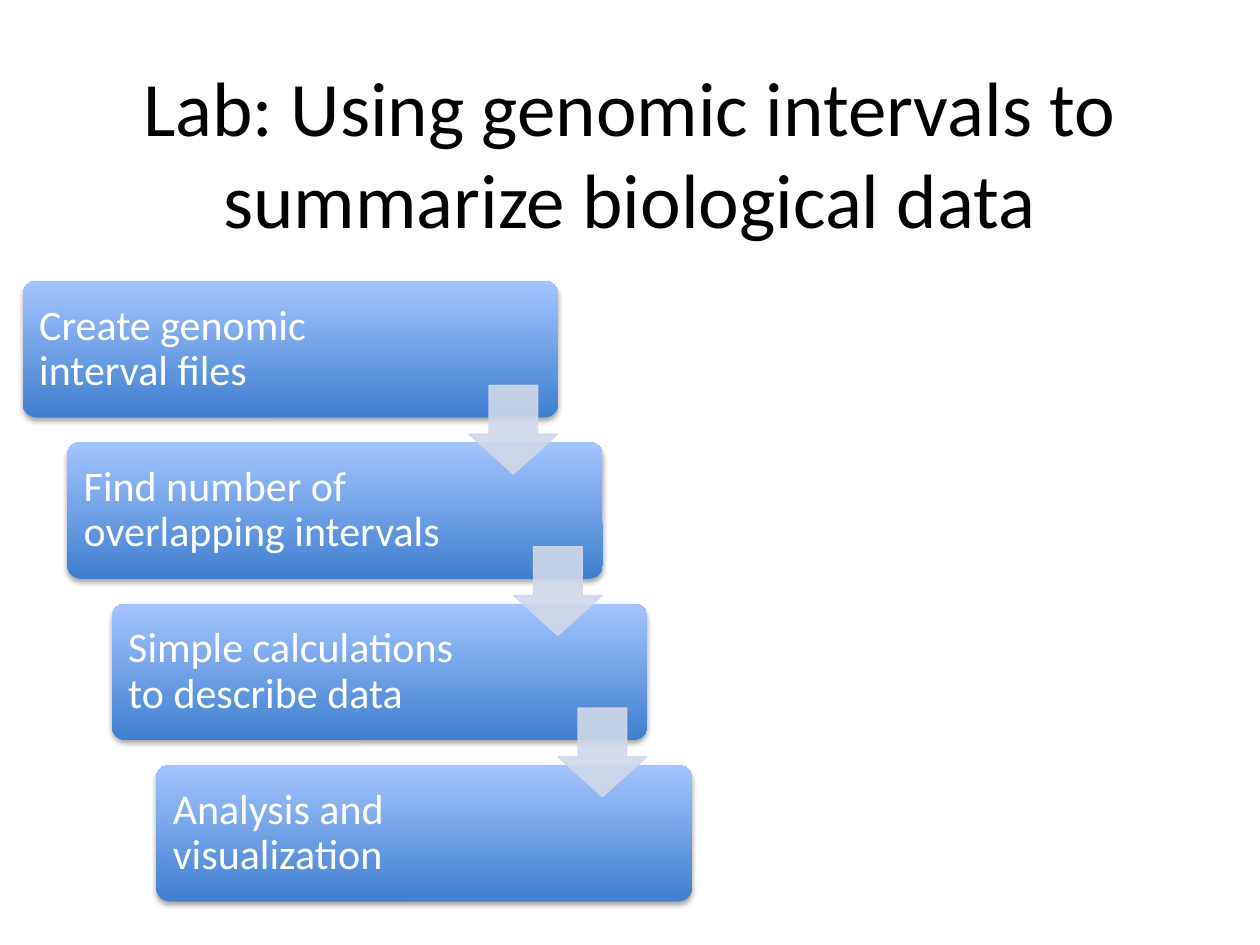
from lxml import etree
from pptx import Presentation
from pptx.dml.color import RGBColor
from pptx.enum.shapes import MSO_SHAPE
from pptx.enum.text import MSO_ANCHOR, PP_ALIGN
from pptx.oxml import parse_xml
from pptx.oxml.ns import qn
from pptx.util import Pt

ROUNDED, DOWN_ARROW = MSO_SHAPE.ROUNDED_RECTANGLE, MSO_SHAPE.DOWN_ARROW
MIDDLE = MSO_ANCHOR.MIDDLE
LEFT, CENTER = PP_ALIGN.LEFT, PP_ALIGN.CENTER
COLORS = {"title": "000000", "step_text": "FFFFFF", "step_bottom": "3F7FCE",
          "step_top": "A4C4FF", "arrow": "D0D8E8", "shadow": "000000"}
FONT = "Calibri"
STEPS = ["Create genomic interval files", "Find number of overlapping intervals",
         "Simple calculations to describe data", "Analysis and visualization"]

# Staircase geometry, in points
STEP_LEFT, STEP_TOP, STEP_W, STEP_H = 13, 160.6, 306, 78
SHIFT_X, SHIFT_Y = 25.45, 92.2
LABEL_INSET, LABEL_W = 2.3, 224.6
ARROW_LEFT, ARROW_TOP, ARROW_SIZE = 268, 220.2, 50.7

SHADOW = (
    '<a:effectLst xmlns:a="http://schemas.openxmlformats.org/drawingml/2006/main">'
    f'<a:outerShdw blurRad="{Pt(3.1)}" dist="{Pt(1.8)}" dir="5400000" rotWithShape="0">'
    f'<a:srgbClr val="{COLORS["shadow"]}"><a:alpha val="35000"/></a:srgbClr>'
    '</a:outerShdw></a:effectLst>')

prs = Presentation()
prs.slide_width, prs.slide_height = Pt(720), Pt(540)
slide = prs.slides.add_slide(prs.slide_layouts[6])


def add_text(left, top, width, height, text, size, color, align, spacing=1.0):
    box = slide.shapes.add_textbox(Pt(left), Pt(top), Pt(width), Pt(height))
    frame = box.text_frame
    frame.word_wrap = True
    frame.vertical_anchor = MIDDLE
    paragraph = frame.paragraphs[0]
    paragraph.alignment = align
    paragraph.line_spacing = spacing
    run = paragraph.add_run()
    run.text = text
    run.font.name = FONT
    run.font.size = Pt(size)
    run.font.color.rgb = RGBColor.from_string(COLORS[color])
    return frame


# Title
add_text(54, 28.8, 612, 116, "Lab: Using genomic intervals to summarize biological data",
         44, "title", CENTER)

# Workflow steps, each one further right and down
for i, step in enumerate(STEPS):
    left, top = STEP_LEFT + i * SHIFT_X, STEP_TOP + i * SHIFT_Y
    card = slide.shapes.add_shape(ROUNDED, Pt(left), Pt(top), Pt(STEP_W), Pt(STEP_H))
    card.adjustments[0] = 0.1
    card.fill.gradient()
    card.fill.gradient_angle = 90
    for stop, color in zip(card.fill.gradient_stops, ("step_bottom", "step_top")):
        stop.color.rgb = RGBColor.from_string(COLORS[color])
    card.line.fill.background()
    card._element.spPr.append(parse_xml(SHADOW))

    label = add_text(left + LABEL_INSET, top + LABEL_INSET, LABEL_W,
                     STEP_H - 2 * LABEL_INSET, step, 24, "step_text", LEFT, 0.9)
    label.margin_left = label.margin_right = Pt(7.2)
    label.margin_top = label.margin_bottom = Pt(7.2)

# Arrows between neighbouring steps
for i in range(len(STEPS) - 1):
    arrow = slide.shapes.add_shape(DOWN_ARROW, Pt(ARROW_LEFT + i * SHIFT_X),
                                   Pt(ARROW_TOP + i * SHIFT_Y),
                                   Pt(ARROW_SIZE), Pt(ARROW_SIZE))
    arrow.adjustments[0], arrow.adjustments[1] = 0.55, 0.45
    arrow.shadow.inherit = False
    arrow.fill.solid()
    arrow.line.width = Pt(0.75)
    for paint in (arrow.fill.fore_color, arrow.line.color):
        paint.rgb = RGBColor.from_string(COLORS["arrow"])
    for tint in arrow._element.spPr.iter(qn("a:srgbClr")):
        etree.SubElement(tint, qn("a:alpha")).set("val", "90000")

prs.save("out.pptx")
